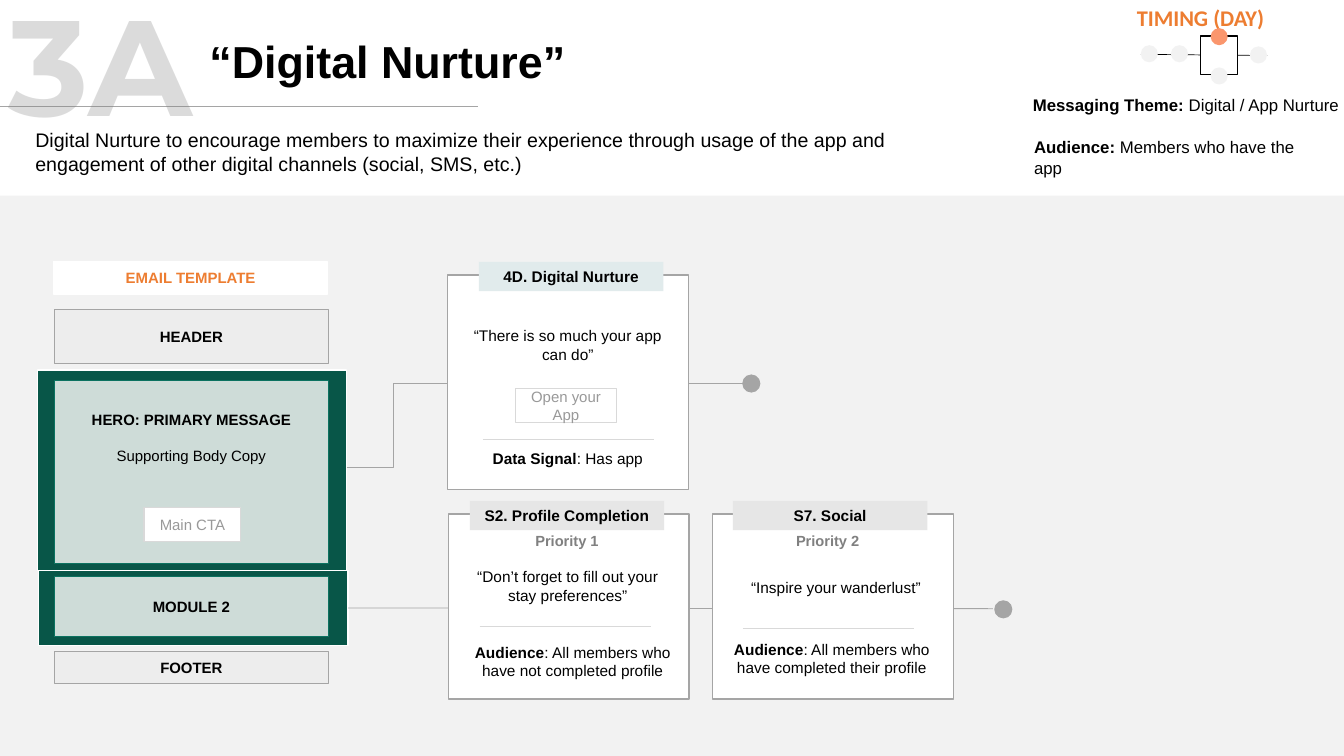
from lxml.etree import SubElement
from pptx import Presentation
from pptx.dml.color import RGBColor
from pptx.enum.shapes import MSO_CONNECTOR, MSO_SHAPE
from pptx.enum.text import MSO_ANCHOR, PP_ALIGN
from pptx.oxml.ns import qn
from pptx.util import Cm, Pt

BLACK = RGBColor(0x00, 0x00, 0x00)
WHITE = RGBColor(0xFF, 0xFF, 0xFF)
PANEL = RGBColor(0xF2, 0xF2, 0xF2)
GREY = RGBColor(0xA5, 0xA5, 0xA5)
MID_GREY = RGBColor(0x80, 0x80, 0x80)
BUTTON_GREY = RGBColor(0x99, 0x99, 0x99)
RULE_GREY = RGBColor(0xD9, 0xD9, 0xD9)
BLOCK_GREY = RGBColor(0xED, 0xED, 0xED)
TAB_GREY = RGBColor(0xE6, 0xE6, 0xE6)
TAB_BLUE = RGBColor(0xE1, 0xEB, 0xEC)
DARK_GREEN = RGBColor(0x08, 0x56, 0x48)
GREEN = RGBColor(0x0B, 0x72, 0x60)
PALE_GREEN = RGBColor(0xCE, 0xDC, 0xD8)
ORANGE = RGBColor(0xED, 0x7D, 0x31)
PEACH = RGBColor(0xFA, 0x96, 0x6D)


def write(tf, text, lead="", size=11, font="Arial", color=BLACK, bold=False,
          align=PP_ALIGN.CENTER, anchor=MSO_ANCHOR.TOP, inset=None,
          spacing=None, alpha=None):
    """Fill a text frame with one paragraph; lead is a bold opening."""
    tf.word_wrap = True
    tf.vertical_anchor = anchor
    if inset is not None:
        tf.margin_left = tf.margin_right = Cm(inset)
        tf.margin_top = tf.margin_bottom = Cm(inset)
    p = tf.paragraphs[0]
    p.alignment = align
    p.line_spacing = spacing
    for part, strong in ((lead, True), (text, bold)):
        if not part:
            continue
        r = p.add_run()
        r.text = part
        r.font.name, r.font.size, r.font.bold = font, Pt(size), strong
        r.font.color.rgb = color
        if alpha is not None:
            clr = r.font.fill._xPr.find(".//" + qn("a:srgbClr"))
            SubElement(clr, qn("a:alpha")).set("val", str(alpha * 1000))


class Board:
    def __init__(self, slide):
        self.s = slide

    def shape(self, x, y, w, h, fill, line=None, width=0.75,
              kind=MSO_SHAPE.RECTANGLE):
        sp = self.s.shapes.add_shape(kind, Cm(x), Cm(y), Cm(w), Cm(h))
        sp.shadow.inherit = False
        sp.fill.solid()
        sp.fill.fore_color.rgb = fill
        if line is None:
            sp.line.fill.background()
        else:
            sp.line.color.rgb = line
            sp.line.width = Pt(width)
        return sp

    def dot(self, x, y, fill, line=None):
        return self.shape(x, y, 0.43, 0.43, fill, line, kind=MSO_SHAPE.OVAL)

    def text(self, x, y, w, h, text, **style):
        sp = self.s.shapes.add_textbox(Cm(x), Cm(y), Cm(w), Cm(h))
        write(sp.text_frame, text, **style)

    def block(self, x, y, w, h, text, fill, line, color=BLACK, bold=True):
        sp = self.shape(x, y, w, h, fill, line)
        write(sp.text_frame, text, size=10.7, color=color, bold=bold,
              anchor=MSO_ANCHOR.MIDDLE, inset=0.33)
        return sp

    def line(self, x1, y1, x2, y2, color=GREY, width=0.5, bend=None):
        kind = MSO_CONNECTOR.STRAIGHT if bend is None else MSO_CONNECTOR.ELBOW
        c = self.s.shapes.add_connector(kind, Cm(x1), Cm(y1), Cm(x2), Cm(y2))
        c.line.color.rgb = color
        c.line.width = Pt(width)
        props = c._element.spPr
        SubElement(props, qn("a:effectLst"))
        if bend is not None:
            guides = props.find(qn("a:prstGeom")).get_or_add_avLst()
            gd = SubElement(guides, qn("a:gd"))
            gd.set("name", "adj1")
            gd.set("fmla", f"val {round(bend * 100000)}")
        return c

    def card(self, box, tab, tab_fill, title, quote_at, quote, rule_at,
             note_at, lead, note):
        self.shape(*box, WHITE, GREY, 1)
        sp = self.shape(*tab, 0.74, tab_fill)
        write(sp.text_frame, title, bold=True)
        self.text(*quote_at, 5.46, 1.19, quote)
        x, y = rule_at
        self.line(x, y, x + 4.32, y, RULE_GREY, 0.25)
        self.text(*note_at, 1.19, note, lead=lead)


def main():
    prs = Presentation()
    prs.slide_width, prs.slide_height = Cm(33.87), Cm(19.05)
    b = Board(prs.slides.add_slide(prs.slide_layouts[6]))
    left, middle = PP_ALIGN.LEFT, MSO_ANCHOR.MIDDLE

    # Panel, green frames and the connectors that run behind the cards
    b.shape(0, 4.93, 33.87, 14.12, PANEL)
    b.shape(0.94, 9.32, 7.8, 5.05, DARK_GREEN, WHITE, 1)
    module_frame = b.shape(0.97, 14.38, 7.8, 1.88, DARK_GREEN, WHITE, 1)
    b.line(8.74, 11.79, 18.14, 9.65, bend=0.124)
    b.line(8.77, 15.32, 25.02, 15.34).begin_connect(module_frame, 3)
    b.line(23.88, 15.32, 24.89, 15.32)
    b.line(17.6, 9.65, 18.75, 9.65)
    b.dot(25.07, 15.14, GREY, GREY)
    b.dot(18.72, 9.45, GREY, GREY)

    # Heading
    b.text(5.03, 0.89, 26.92, 2.08, "“Digital Nurture”", size=32, bold=True,
           align=left, spacing=0.9)
    b.line(0, 2.69, 12.04, 2.69)
    b.text(-0.03, -0.61, 6.12, 4.39, "3A", size=97, font="Montserrat",
           color=MID_GREY, bold=True, align=left, alpha=28)
    b.text(0.64, 3.1, 23.57, 1.45,
           "Digital Nurture to encourage members to maximize their experience "
           "through usage of the app and engagement of other digital channels "
           "(social, SMS, etc.)", size=14, align=left, anchor=middle)

    # Email template
    x, w = 1.37, 6.91
    b.block(1.35, 6.6, w, 0.81, "EMAIL TEMPLATE", WHITE, WHITE, ORANGE)
    b.block(x, 7.8, w, 1.37, "HEADER", BLOCK_GREY, GREY)
    hero = b.block(x, 9.6, w, 4.6, "HERO: PRIMARY MESSAGE", PALE_GREEN, GREEN)
    tf = hero.text_frame
    tf.vertical_anchor = MSO_ANCHOR.TOP
    tf.margin_top = Cm(0.74)
    p = tf.add_paragraph()
    p.alignment = PP_ALIGN.CENTER
    p.space_before = Pt(13)
    r = p.add_run()
    r.text = "Supporting Body Copy"
    r.font.name, r.font.size, r.font.color.rgb = "Arial", Pt(10.7), BLACK
    b.block(3.63, 12.78, 2.44, 0.86, "Main CTA", WHITE, RULE_GREY,
            BUTTON_GREY, bold=False)
    b.block(x, 14.53, w, 1.52, "MODULE 2", PALE_GREEN, GREEN)
    b.block(x, 16.41, w, 0.81, "FOOTER", BLOCK_GREY, GREY)

    # Message cards
    b.card((11.28, 6.93, 6.07, 5.41), (12.07, 6.6, 4.65), TAB_BLUE,
           "4D. Digital Nurture", (11.58, 8.1),
           "“There is so much your app can do”", (12.17, 11.07),
           (11.58, 11.2, 5.46), "Data Signal", ": Has app")
    b.block(12.98, 9.8, 2.57, 0.86, "Open your App", WHITE, RULE_GREY,
            BUTTON_GREY, bold=False)
    b.card((11.3, 12.95, 6.07, 4.67), (11.84, 12.62, 4.9), TAB_GREY,
           "S2. Profile Completion", (11.58, 14.17),
           "“Don’t forget to fill out your stay preferences”",
           (12.09, 15.77), (11.4, 16.08, 6.07), "Audience",
           ": All members who have not completed profile")
    b.card((17.96, 12.95, 6.07, 4.67), (18.47, 12.62, 4.9), TAB_GREY,
           "S7. Social", (18.34, 14.45), "“Inspire your wanderlust”",
           (18.72, 15.82), (17.93, 16, 6.07), "Audience",
           ": All members who have completed their profile")
    for rank, x in enumerate((12.73, 19.3), 1):
        b.text(x, 13.28, 3.12, 0.74, f"Priority {rank}", size=10.5,
               color=MID_GREY, bold=True)

    # Theme and audience
    b.text(25.78, 2.16, 9.4, 0.97, "Digital / App Nurture",
           lead="Messaging Theme: ", size=12, align=left, anchor=middle)
    b.text(25.81, 3.15, 7.85, 1.63, "Members who have the app",
           lead="Audience: ", size=12, align=left, anchor=middle)

    # Timing diagram
    b.text(28.4, -0.03, 4.09, 0.94, "TIMING (DAY)", size=16, font="Calibri",
           color=ORANGE, bold=True, align=left)
    b.line(28.75, 1.37, 31.93, 1.4, BLACK)
    b.shape(30.25, 0.91, 0.94, 0.97, WHITE, BLACK, 1)
    for x, y, fill in ((28.75, 1.14, PANEL), (29.51, 1.14, PANEL),
                       (31.5, 1.17, PANEL), (30.51, 0.71, PEACH),
                       (30.51, 1.7, PANEL)):
        b.dot(x, y, fill)

    prs.save("out.pptx")


if __name__ == "__main__":
    main()
